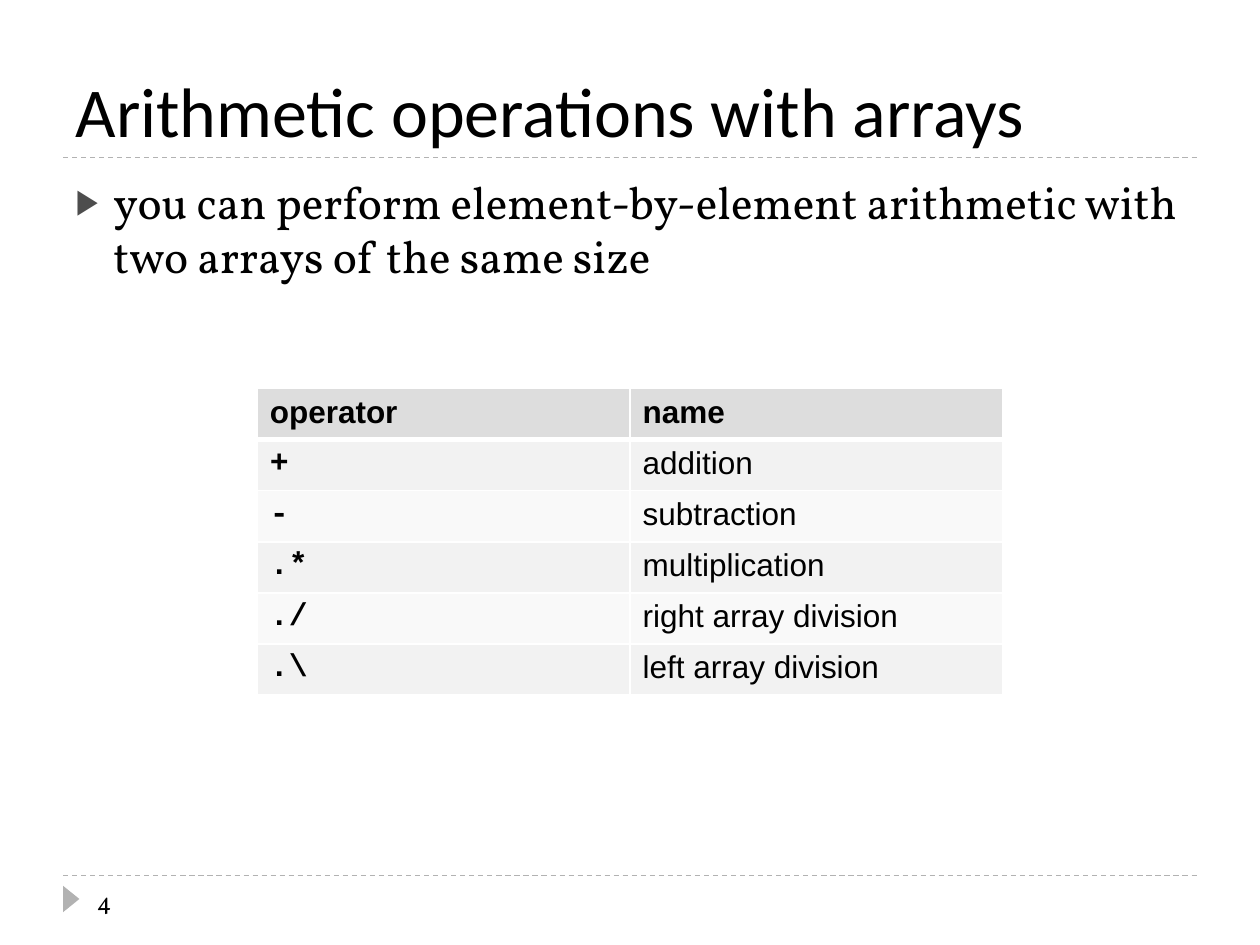
"""Build the slide on arithmetic operations with arrays."""
from lxml import etree
from pptx import Presentation
from pptx.dml.color import RGBColor
from pptx.enum.dml import MSO_LINE
from pptx.enum.shapes import MSO_CONNECTOR, MSO_SHAPE
from pptx.enum.text import MSO_ANCHOR, MSO_AUTO_SIZE, PP_ALIGN
from pptx.oxml.ns import qn
from pptx.util import Pt

STRAIGHT = MSO_CONNECTOR.STRAIGHT
TRIANGLE = MSO_SHAPE.ISOSCELES_TRIANGLE
DASH = MSO_LINE.DASH
BOTTOM, MIDDLE, TOP = MSO_ANCHOR.BOTTOM, MSO_ANCHOR.MIDDLE, MSO_ANCHOR.TOP
LEFT = PP_ALIGN.LEFT
NO_FIT = MSO_AUTO_SIZE.NONE

BLACK = RGBColor(0x00, 0x00, 0x00)
WHITE = RGBColor(0xFF, 0xFF, 0xFF)
RULE_GREY = RGBColor(0xB2, 0xB2, 0xB2)
BULLET_GREY = RGBColor(0x4D, 0x4D, 0x4D)
HEADER_GREY = RGBColor(0xDD, 0xDD, 0xDD)
BAND_GREYS = (RGBColor(0xF2, 0xF2, 0xF2), RGBColor(0xF9, 0xF9, 0xF9))

TITLE_FONT, BODY_FONT = "Calibri", "Vollkorn"
TABLE_FONT, CODE_FONT = "Arial", "Courier New"

MARGIN, CONTENT_WIDTH = 36, 648
OPERATORS = [
    ("operator", "name"),
    ("+", "addition"),
    ("-", "subtraction"),
    (".*", "multiplication"),
    ("./", "right array division"),
    (".\\", "left array division"),
]


class ArraySlide:
    """Hold the slide and draw its elements in one style."""

    def __init__(self, deck):
        self.slide = deck.slides.add_slide(deck.slide_layouts[1])
        self.shapes = self.slide.shapes

    def set_text(self, frame, text, font, size, bold=False):
        frame.text = text
        paragraph = frame.paragraphs[0]
        paragraph.alignment = LEFT
        style = paragraph.runs[0].font
        style.name, style.size, style.bold = font, Pt(size), bold
        style.color.rgb = BLACK
        return paragraph

    def place(self, holder, top, height, anchor):
        holder.left, holder.top = Pt(MARGIN), Pt(top)
        holder.width, holder.height = Pt(CONTENT_WIDTH), Pt(height)
        frame = holder.text_frame
        frame.word_wrap, frame.auto_size = True, NO_FIT
        frame.vertical_anchor = anchor
        return frame

    def title(self, text):
        frame = self.place(self.shapes.title, 12.24, 77.76, BOTTOM)
        self.set_text(frame, text, TITLE_FONT, 40)

    def bullet(self, text):
        frame = self.place(self.slide.placeholders[1], 95.76, 388.8, TOP)
        point = self.set_text(frame, text, BODY_FONT, 26)
        point.space_before = Pt(6)
        props = point._p.get_or_add_pPr()
        props.set("marL", str(Pt(21.6)))
        props.set("indent", str(-Pt(21.6)))
        color = etree.SubElement(props, qn("a:buClr"))
        etree.SubElement(color, qn("a:srgbClr"), val=str(BULLET_GREY))
        etree.SubElement(props, qn("a:buSzPct"), val="76000")
        etree.SubElement(props, qn("a:buFont"), typeface=TABLE_FONT)
        etree.SubElement(props, qn("a:buChar"), char="▶")

    def rule(self, top):
        rule = self.shapes.add_connector(
            STRAIGHT, Pt(MARGIN), Pt(top), Pt(MARGIN + CONTENT_WIDTH), Pt(top))
        rule.line.color.rgb = RULE_GREY
        rule.line.width = Pt(0.75)
        rule.line.dash_style = DASH
        etree.SubElement(rule._element.spPr, qn("a:effectLst"))

    def page_number(self, number):
        marker = self.shapes.add_shape(
            TRIANGLE, Pt(33.12), Pt(509.04), Pt(15.12), Pt(9.36))
        marker.rotation = 90
        marker.shadow.inherit = False
        marker.fill.solid()
        marker.fill.fore_color.rgb = RULE_GREY
        marker.line.fill.background()
        label = self.shapes.add_textbox(Pt(48.24), Pt(500.4), Pt(156.24), Pt(28.8))
        label.text_frame.word_wrap = True
        label.text_frame.vertical_anchor = MIDDLE
        self.set_text(label.text_frame, number, BODY_FONT, 14)

    def border(self, cell, side, width):
        props = cell._tc.get_or_add_tcPr()
        edge = etree.SubElement(props, qn(f"a:ln{side}"), w=str(Pt(width)))
        fill = etree.SubElement(edge, qn("a:solidFill"))
        etree.SubElement(fill, qn("a:srgbClr"), val=str(WHITE))

    def table(self, rows, left, top, width, height):
        grid = self.shapes.add_table(
            len(rows), len(rows[0]), Pt(left), Pt(top), Pt(width), Pt(height)).table
        for r, row in enumerate(rows):
            header = r == 0
            top_width = 3 if r == 1 else 1
            bottom_width = 3 if header else 1
            for c, text in enumerate(row):
                cell = grid.cell(r, c)
                symbol = c == 0 and not header
                self.set_text(cell.text_frame, text,
                              CODE_FONT if symbol else TABLE_FONT, 18, header or symbol)
                for side, weight in zip("LRTB", (1, 1, top_width, bottom_width)):
                    self.border(cell, side, weight)
                cell.fill.solid()
                cell.fill.fore_color.rgb = (
                    HEADER_GREY if header else BAND_GREYS[(r - 1) % 2])


def main():
    deck = Presentation()
    deck.slide_width, deck.slide_height = Pt(720), Pt(540)
    page = ArraySlide(deck)
    page.rule(500.4)
    page.rule(90)
    page.title("Arithmetic operations with arrays")
    page.bullet("you can perform element-by-element arithmetic with "
                "two arrays of the same size")
    page.page_number("4")
    page.table(OPERATORS, 147, 222, 426, 175.2)
    deck.save("out.pptx")


if __name__ == "__main__":
    main()
